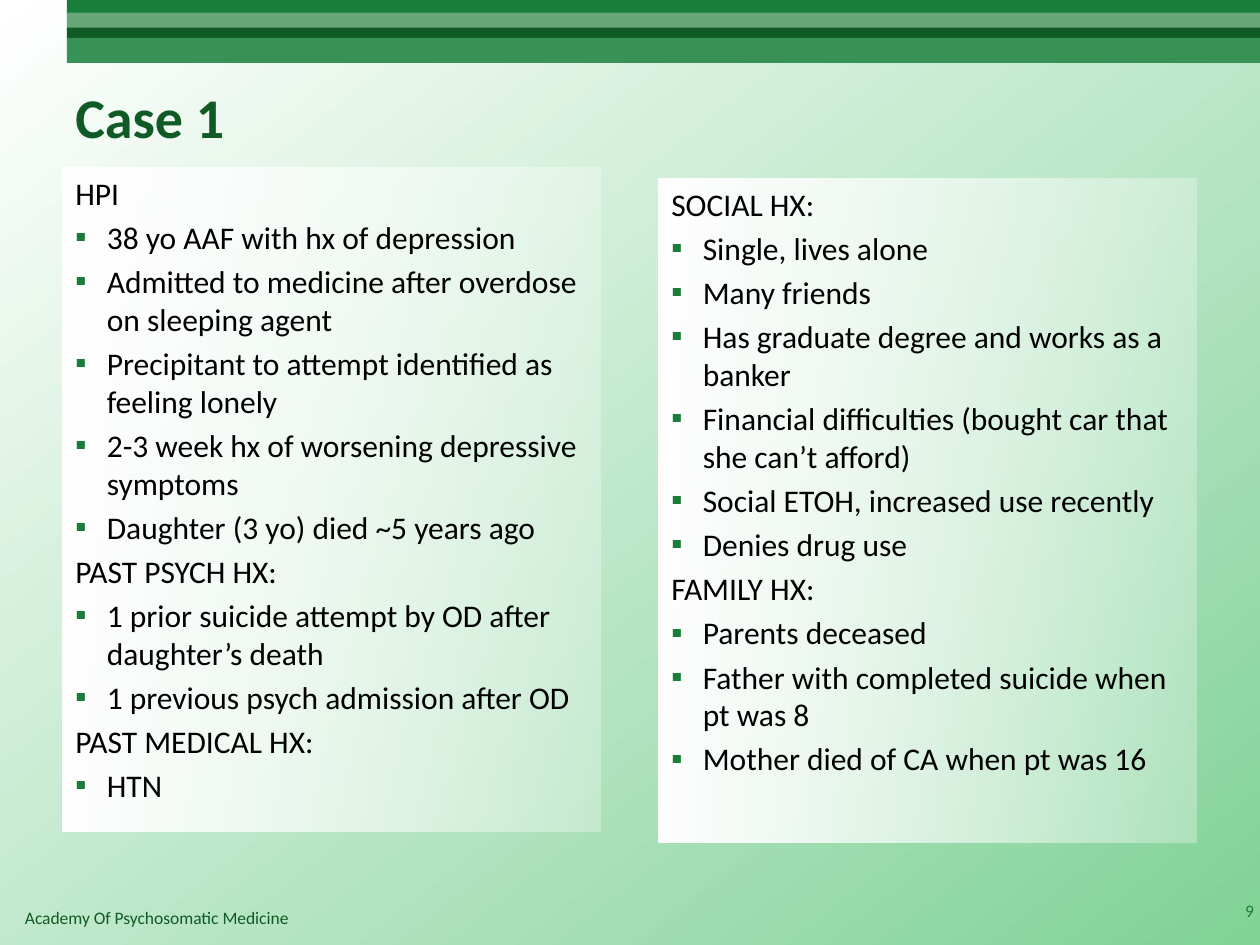
from dataclasses import dataclass

from lxml.etree import SubElement
from pptx import Presentation
from pptx.dml.color import RGBColor
from pptx.enum.shapes import MSO_SHAPE
from pptx.enum.text import MSO_ANCHOR, PP_ALIGN
from pptx.oxml.ns import qn
from pptx.util import Inches, Pt


@dataclass(frozen=True)
class Theme:
    font: str = "Calibri"
    dark: str = "105A25"
    green: str = "177D38"
    pale: str = "66A677"
    mid: str = "389155"
    mint: str = "81D297"
    white: str = "FFFFFF"
    black: str = "000000"
    title: int = 32
    body: int = 18
    small: int = 10


THEME = Theme()

STRIPES = [
    (0, 0.11, THEME.green),
    (0.1, 0.13, THEME.pale),
    (0.22, 0.09, THEME.dark),
    (0.3, 0.2, THEME.mid),
]

HISTORY = [
    ("HPI", [
        "38 yo AAF with hx of depression",
        "Admitted to medicine after overdose on sleeping agent",
        "Precipitant to attempt identified as feeling lonely",
        "2-3 week hx of worsening depressive symptoms",
        "Daughter (3 yo) died ~5 years ago",
    ]),
    ("PAST PSYCH HX:", [
        "1 prior suicide attempt by OD after daughter’s death",
        "1 previous psych admission after OD",
    ]),
    ("PAST MEDICAL HX:", ["HTN"]),
]

BACKGROUND = [
    ("SOCIAL HX:", [
        "Single, lives alone",
        "Many friends",
        "Has graduate degree and works as a banker",
        "Financial difficulties (bought car that she can’t afford)",
        "Social ETOH, increased use recently",
        "Denies drug use",
    ]),
    ("FAMILY HX:", [
        "Parents deceased",
        "Father with completed suicide when pt was 8",
        "Mother died of CA when pt was 16",
    ]),
]


def apply_format(obj, values):
    for name, value in values.items():
        setattr(obj, name, value)


def set_font(font, size, color, bold=False):
    apply_format(font, {"name": THEME.font, "size": Pt(size), "bold": bold})
    font.color.rgb = RGBColor.from_string(color)


def set_gradient(fill, colors, angle):
    fill.gradient()
    fill.gradient_angle = angle
    for stop, color in zip(fill.gradient_stops, colors):
        stop.color.rgb = RGBColor.from_string(color)


def add_rect(s, box):
    sp = s.shapes.add_shape(MSO_SHAPE.RECTANGLE, *map(Inches, box))
    sp.shadow.inherit = False
    sp.line.fill.background()
    return sp


def add_stripe(s, top, height, color):
    sp = add_rect(s, (0.53, top, 9.49, height))
    sp.fill.solid()
    sp.fill.fore_color.rgb = RGBColor.from_string(color)


def add_label(s, box, text, size, color, bold=False,
              anchor=MSO_ANCHOR.TOP, align=PP_ALIGN.LEFT):
    tf = s.shapes.add_textbox(*map(Inches, box)).text_frame
    apply_format(tf, {"word_wrap": True, "vertical_anchor": anchor})
    p = tf.paragraphs[0]
    p.alignment = align
    r = p.add_run()
    r.text = text
    set_font(r.font, size, color, bold)


def add_bullet(p):
    pPr = p._p.get_or_add_pPr()
    color = SubElement(pPr, qn("a:buClr"))
    SubElement(color, qn("a:srgbClr"), val=THEME.green)
    SubElement(pPr, qn("a:buFont"), typeface=THEME.font)
    SubElement(pPr, qn("a:buChar"), char="▪")


def add_panel(s, left, top, sections):
    sp = add_rect(s, (left, top, 4.27, 5.27))
    set_gradient(sp.fill, [THEME.white, THEME.white], 0)
    end_color = sp.element.spPr.findall(".//" + qn("a:srgbClr"))[-1]
    SubElement(end_color, qn("a:alpha"), val="30000")

    tf = sp.text_frame
    apply_format(tf, {"word_wrap": True, "vertical_anchor": MSO_ANCHOR.TOP})
    lines = [(text, text != heading)
             for heading, items in sections
             for text in [heading, *items]]
    for i, (text, bulleted) in enumerate(lines):
        p = tf.add_paragraph() if i else tf.paragraphs[0]
        p.alignment = PP_ALIGN.LEFT
        p.space_before = Pt(3.6 if i else 0)
        pPr = p._p.get_or_add_pPr()
        pPr.set("marL", str(Inches(0.25)))
        pPr.set("indent", str(Inches(-0.25)))
        if bulleted:
            add_bullet(p)
        r = p.add_run()
        r.text = text
        set_font(r.font, THEME.body, THEME.black)


def main():
    prs = Presentation()
    apply_format(prs, {"slide_width": Inches(10), "slide_height": Inches(7.5)})
    s = prs.slides.add_slide(prs.slide_layouts[6])
    set_gradient(s.background.fill, [THEME.white, THEME.mint], 360 - 52)
    for stripe in STRIPES:
        add_stripe(s, *stripe)
    add_label(s, (0.1, 7.15, 6.94, 0.27), "Academy Of Psychosomatic Medicine",
              THEME.small, THEME.dark)
    add_label(s, (0.5, 0.3, 9, 1.25), "Case 1", THEME.title, THEME.dark,
              bold=True, anchor=MSO_ANCHOR.MIDDLE)
    add_panel(s, 0.5, 1.33, HISTORY)
    add_label(s, (9.65, 7.03, 0.4, 0.4), "9", THEME.small, THEME.green,
              anchor=MSO_ANCHOR.MIDDLE, align=PP_ALIGN.RIGHT)
    add_panel(s, 5.23, 1.42, BACKGROUND)
    prs.save("out.pptx")


if __name__ == "__main__":
    main()
